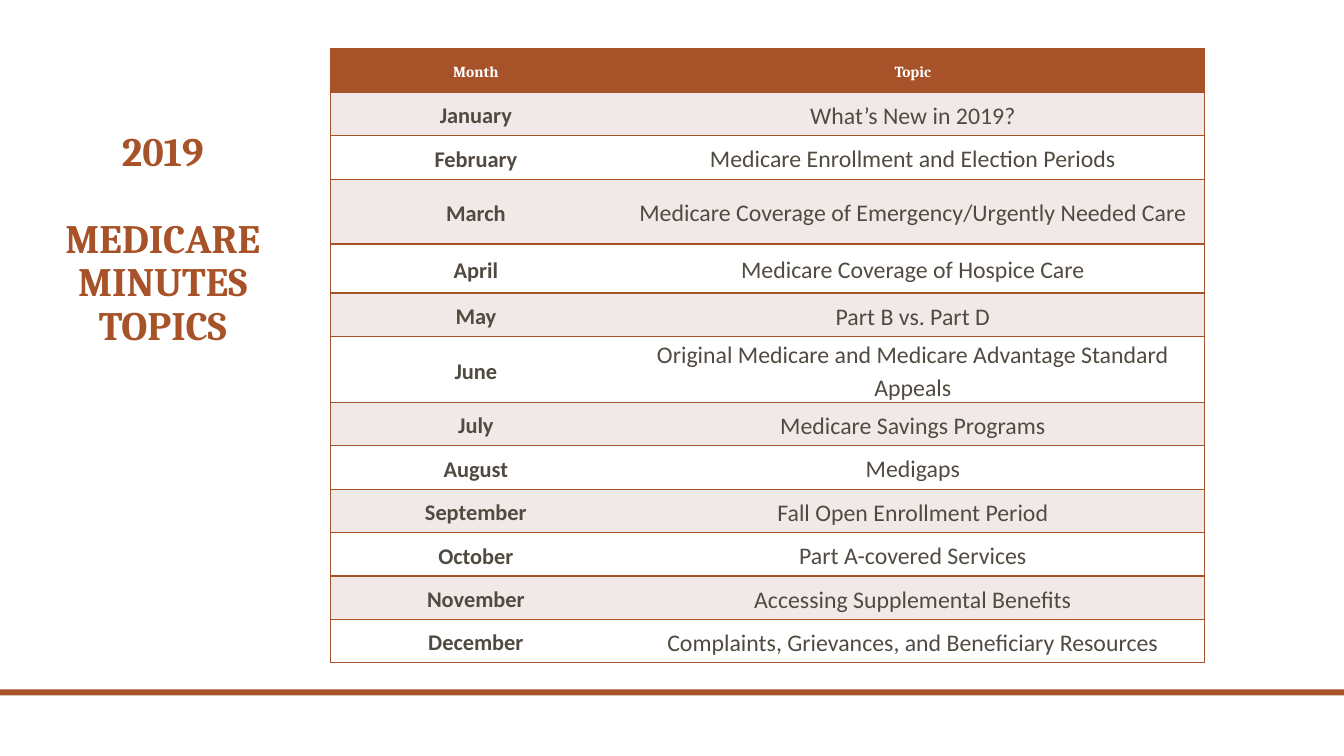
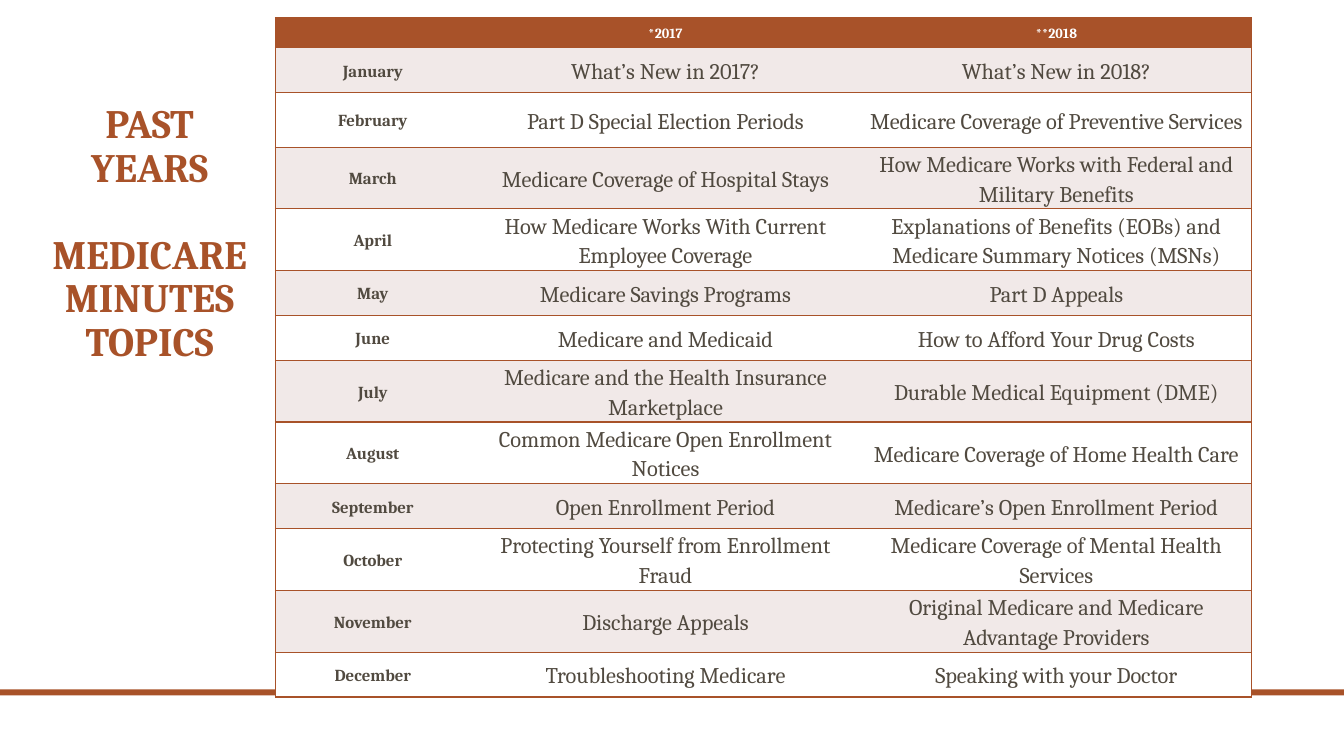
from dataclasses import dataclass

from lxml.etree import SubElement
from pptx import Presentation
from pptx.dml.color import RGBColor
from pptx.enum.shapes import MSO_SHAPE as Shape
from pptx.enum.text import MSO_ANCHOR as Anchor, PP_ALIGN as Align
from pptx.oxml.ns import qn
from pptx.slide import Slide
from pptx.table import _Cell as Cell
from pptx.util import Pt

# Shared look
COLORS = {"rust": "A85229", "ink": "514A40", "blush": "F1E9E8", "white": "FFFFFF"}
SLIDE_WIDTH, SLIDE_HEIGHT = 960, 540
BAND_TOP, BAND_HEIGHT = 492.5, 4.3
TITLE_WIDTH, TITLE_HEIGHT = 160.6, 200
TITLE_GAP = 31
CELL_MARGIN = 5
MONTHS = ("January", "February", "March", "April", "May", "June", "July",
          "August", "September", "October", "November", "December")


@dataclass(frozen=True)
class TextStyle:
    size: float
    font: str = "Cambria"
    bold: bool = True
    color: str = "ink"


@dataclass(frozen=True)
class TopicPage:
    title: tuple[str, ...]
    title_at: tuple[float, float]
    table_at: tuple[float, float]
    header: tuple[str, ...]
    topics: tuple[tuple[str, ...], ...]
    widths: tuple[float, ...]
    heights: tuple[float, ...]
    header_style: TextStyle
    month_style: TextStyle
    topic_style: TextStyle


TITLE_STYLE = TextStyle(28.8, color="rust")

PAGES = (
    TopicPage(
        title=("2019", "MEDICARE MINUTES", "TOPICS"),
        title_at=(36, 52.7),
        table_at=(236.2, 35),
        header=("Month", "Topic"),
        topics=(
            ("What’s New in 2019?",),
            ("Medicare Enrollment and Election Periods",),
            ("Medicare Coverage of Emergency/Urgently Needed Care",),
            ("Medicare Coverage of Hospice Care",),
            ("Part B vs. Part D",),
            ("Original Medicare and Medicare Advantage Standard Appeals",),
            ("Medicare Savings Programs",),
            ("Medigaps",),
            ("Fall Open Enrollment Period",),
            ("Part A-covered Services",),
            ("Accessing Supplemental Benefits",),
            ("Complaints, Grievances, and Beneficiary Resources",),
        ),
        widths=(207.4, 416.9),
        heights=(31, 31, 31, 46.4, 35, 31, 47.2, 31, 31, 31, 31, 31, 31),
        header_style=TextStyle(11, color="white"),
        month_style=TextStyle(16, "Calibri"),
        topic_style=TextStyle(17, "Calibri", bold=False),
    ),
    TopicPage(
        title=("PAST YEARS", "MEDICARE MINUTES", "TOPICS"),
        title_at=(26.6, 64.2),
        table_at=(196.8, 12.6),
        header=("", "*2017", "**2018"),
        topics=(
            ("What’s New in 2017?", "What’s New in 2018?"),
            ("Part D Special Election Periods", "Medicare Coverage of Preventive Services"),
            ("Medicare Coverage of Hospital Stays",
             "How Medicare Works with Federal and Military Benefits"),
            ("How Medicare Works With Current Employee Coverage",
             "Explanations of Benefits (EOBs) and Medicare Summary Notices (MSNs)"),
            ("Medicare Savings Programs", "Part D Appeals"),
            ("Medicare and Medicaid", "How to Afford Your Drug Costs"),
            ("Medicare and the Health Insurance Marketplace", "Durable Medical Equipment (DME)"),
            ("Common Medicare Open Enrollment Notices", "Medicare Coverage of Home Health Care"),
            ("Open Enrollment Period", "Medicare’s Open Enrollment Period"),
            ("Protecting Yourself from Enrollment Fraud",
             "Medicare Coverage of Mental Health Services"),
            ("Discharge Appeals", "Original Medicare and Medicare Advantage Providers"),
            ("Troubleshooting Medicare", "Speaking with your Doctor"),
        ),
        widths=(139, 279.2, 279.2),
        heights=(21.6, 32, 38.9, 42.4, 42.4, 32, 32, 42.4, 42.4, 32, 42.4, 42.4, 32),
        header_style=TextStyle(10, color="white"),
        month_style=TextStyle(12),
        topic_style=TextStyle(16, bold=False),
    ),
)


def rgb(name: str) -> RGBColor:
    return RGBColor.from_string(COLORS[name])


def write(para, text: str, style: TextStyle, spacing: float) -> None:
    """Fill a centred paragraph with one styled run."""
    para.alignment = Align.CENTER
    para.line_spacing = spacing
    if not text:
        SubElement(para._p, qn("a:endParaRPr"), sz=str(style.size * 100))
        return
    span = para.add_run()
    span.text = text
    values = {"size": Pt(style.size), "name": style.font, "bold": style.bold}
    for name, value in values.items():
        setattr(span.font, name, value)
    span.font.color.rgb = rgb(style.color)


def add_band(page: Slide) -> None:
    band = page.shapes.add_shape(
        Shape.RECTANGLE, 0, Pt(BAND_TOP), Pt(SLIDE_WIDTH), Pt(BAND_HEIGHT))
    band.shadow.inherit = False
    band.fill.solid()
    band.fill.fore_color.rgb = rgb("rust")
    band.line.fill.background()


def add_title(page: Slide, lines: tuple[str, ...], at: tuple[float, float]) -> None:
    left, top = at
    box = page.shapes.add_textbox(Pt(left), Pt(top), Pt(TITLE_WIDTH), Pt(TITLE_HEIGHT))
    frame = box.text_frame
    frame.word_wrap = True
    frame.vertical_anchor = Anchor.BOTTOM
    for index, line in enumerate(lines):
        para = frame.paragraphs[0] if index == 0 else frame.add_paragraph()
        if index == 1:
            para.space_before = Pt(TITLE_GAP)
        write(para, line, TITLE_STYLE, 0.9)


def set_borders(cell: Cell, first: bool, last: bool) -> None:
    """Rule the rows and the outer edges, leaving inner columns open."""
    props = cell._tc.get_or_add_tcPr()
    edges = {"a:lnL": first, "a:lnR": last, "a:lnT": True, "a:lnB": True}
    for tag, drawn in edges.items():
        line = SubElement(props, qn(tag), w=str(Pt(1)))
        if drawn:
            fill = SubElement(line, qn("a:solidFill"))
            SubElement(fill, qn("a:srgbClr"), val=COLORS["rust"])
        else:
            SubElement(line, qn("a:noFill"))


def add_topics(page: Slide, content: TopicPage) -> None:
    rows = [content.header]
    rows += [(month, *topics) for month, topics in zip(MONTHS, content.topics)]
    left, top = content.table_at
    table = page.shapes.add_table(
        len(rows), len(content.widths), Pt(left), Pt(top),
        Pt(sum(content.widths)), Pt(sum(content.heights))).table
    for column, width in zip(table.columns, content.widths):
        column.width = Pt(width)
    for row, height in zip(table.rows, content.heights):
        row.height = Pt(height)

    cell_format = {"margin_left": Pt(CELL_MARGIN), "margin_right": Pt(CELL_MARGIN),
                   "margin_top": 0, "margin_bottom": 0, "vertical_anchor": Anchor.MIDDLE}
    for r, texts in enumerate(rows):
        fill = "rust" if r == 0 else "blush" if r % 2 else "white"
        for c, text in enumerate(texts):
            cell = table.cell(r, c)
            for name, value in cell_format.items():
                setattr(cell, name, value)
            set_borders(cell, c == 0, c == len(texts) - 1)
            cell.fill.solid()
            cell.fill.fore_color.rgb = rgb(fill)
            body = content.month_style if c == 0 else content.topic_style
            style = content.header_style if r == 0 else body
            write(cell.text_frame.paragraphs[0], text, style, 1.15)


def main() -> None:
    deck = Presentation()
    deck.slide_width, deck.slide_height = Pt(SLIDE_WIDTH), Pt(SLIDE_HEIGHT)
    for content in PAGES:
        page = deck.slides.add_slide(deck.slide_layouts[6])
        add_band(page)
        add_title(page, content.title, content.title_at)
        add_topics(page, content)
    deck.save("out.pptx")


if __name__ == "__main__":
    main()
